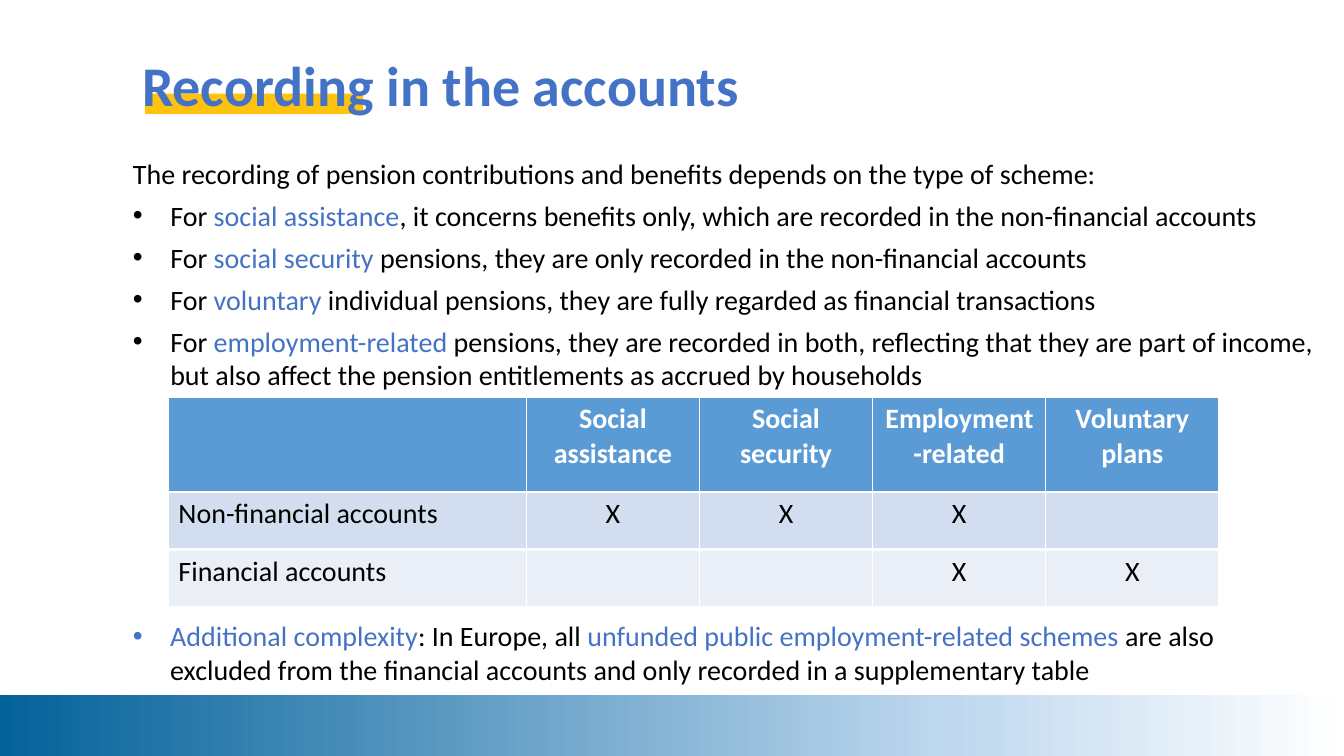
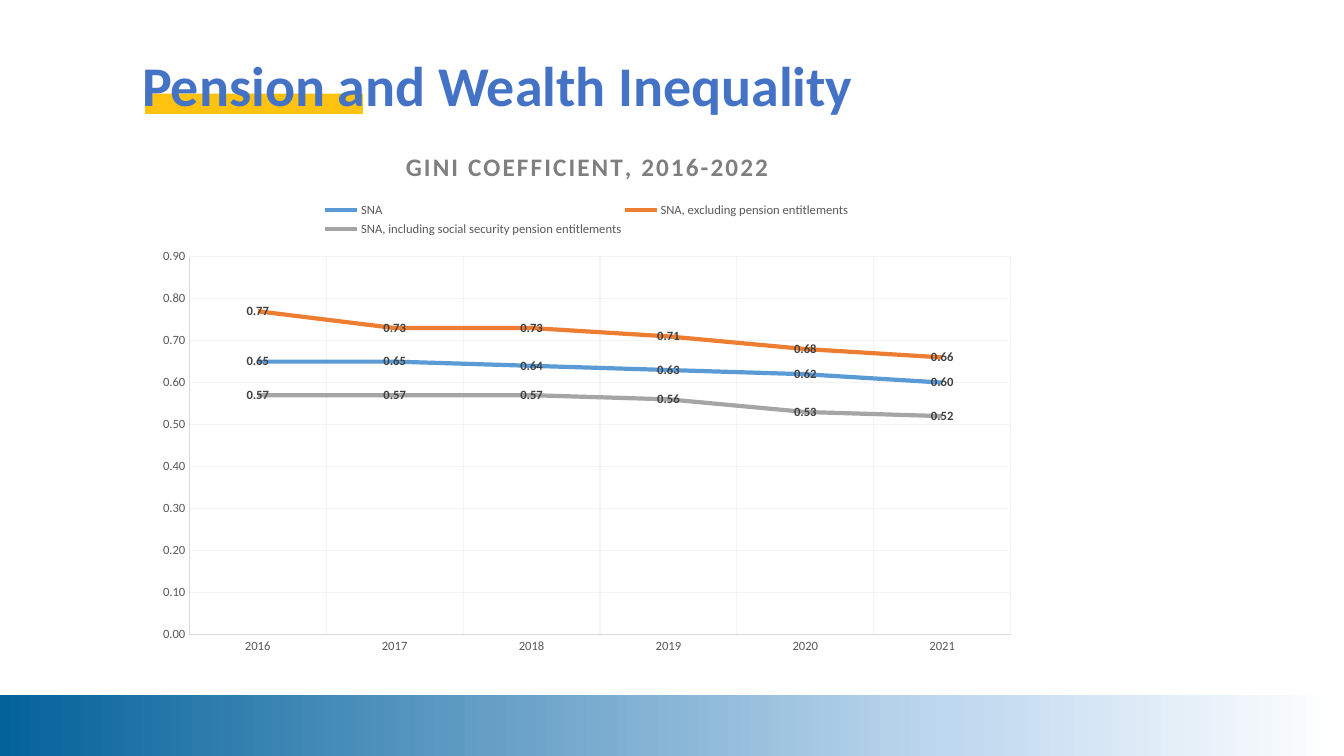
from pptx import Presentation
from pptx.chart.data import CategoryChartData
from pptx.dml.color import RGBColor
from pptx.enum.chart import (XL_CHART_TYPE, XL_LABEL_POSITION,
                             XL_LEGEND_POSITION, XL_TICK_MARK)
from pptx.enum.shapes import MSO_SHAPE
from pptx.enum.text import MSO_ANCHOR, MSO_AUTO_SIZE, PP_ALIGN
from pptx.oxml import parse_xml
from pptx.oxml.ns import nsdecls, qn
from pptx.util import Inches, Pt

FONT = "Calibri"
BLUE = RGBColor(0x44, 0x72, 0xC4)
SKY = RGBColor(0x5B, 0x9B, 0xD5)
GOLD = RGBColor(0xFF, 0xC2, 0x0E)
ORANGE = RGBColor(0xED, 0x7D, 0x31)
SILVER = RGBColor(0xA5, 0xA5, 0xA5)
BLACK = RGBColor(0, 0, 0)
WHITE = RGBColor(0xFF, 0xFF, 0xFF)
DARK = RGBColor(0x40, 0x40, 0x40)
GRAY = RGBColor(0x59, 0x59, 0x59)
MID = RGBColor(0x7F, 0x7F, 0x7F)
AXIS = RGBColor(0xD9, 0xD9, 0xD9)
GRID = RGBColor(0xF3, 0xF3, 0xF3)
BANDS = [RGBColor(0xD2, 0xDE, 0xEF), RGBColor(0xEA, 0xEF, 0xF7)]
FADE = [(0, RGBColor(0x04, 0x62, 0x9A)), (70, RGBColor(0xBD, 0xD7, 0xEE)),
        (100, WHITE)]

INTRO = "The recording of pension contributions and benefits depends on the type of scheme:"
POINTS = [
    "For |social assistance|, it concerns benefits only, which are recorded in the non-financial accounts",
    "For |social security| pensions, they are only recorded in the non-financial accounts",
    "For |voluntary| individual pensions, they are fully regarded as financial transactions",
    "For |employment-related| pensions, they are recorded in both, reflecting that they are part "
    "of income, but also affect the pension entitlements as accrued by households",
]
EXTRA = ("|Additional complexity|: In Europe, all |unfunded public employment-related schemes| "
         "are also excluded from the financial accounts and only recorded in a supplementary table")
ROWS = [
    ["", "Social assistance", "Social security", "Employment-related", "Voluntary plans"],
    ["Non-financial accounts", "X", "X", "X", ""],
    ["Financial accounts", "", "", "X", "X"],
]
YEARS = ["2016", "2017", "2018", "2019", "2020", "2021"]
GINI = [
    ("SNA", SKY, [0.65, 0.65, 0.64, 0.63, 0.62, 0.60]),
    ("SNA, excluding pension entitlements", ORANGE,
     [0.77, 0.73, 0.73, 0.71, 0.68, 0.66]),
    ("SNA, including social security pension entitlements", SILVER,
     [0.57, 0.57, 0.57, 0.56, 0.53, 0.52]),
]


def style(font, size, color, bold=False):
    font.name, font.size, font.bold = FONT, Pt(size), bold
    font.color.rgb = color


def write(para, text, size=20, color=BLACK, bold=False, align=PP_ALIGN.LEFT,
          gap=0, bullet=False):
    """Fill a paragraph; parts between | marks turn blue."""
    para.alignment = align
    para.space_before = para.space_after = Pt(gap)
    for i, part in enumerate(text.split("|")):
        if part:
            run = para.add_run()
            run.text = part
            style(run.font, size, BLUE if i % 2 else color, bold)
    if bullet:
        props = para._p.get_or_add_pPr()
        props.set("marL", str(Inches(0.37)))
        props.set("indent", str(-Inches(0.37)))
        props.append(parse_xml(f'<a:buFont {nsdecls("a")} typeface="Arial"/>'))
        props.append(parse_xml(f'<a:buChar {nsdecls("a")} char="•"/>'))


def bar(slide, box, color):
    shape = slide.shapes.add_shape(MSO_SHAPE.RECTANGLE, *map(Inches, box))
    shape.shadow.inherit = False
    shape.line.fill.background()
    shape.fill.solid()
    shape.fill.fore_color.rgb = color
    return shape


def fade(shape):
    """Swap the solid fill for the left-to-right gradient."""
    stops = "".join(f'<a:gs pos="{pos * 1000}"><a:srgbClr val="{color}"/></a:gs>'
                    for pos, color in FADE)
    props = shape._element.spPr
    props.replace(props.find(qn("a:solidFill")), parse_xml(
        f'<a:gradFill {nsdecls("a")} rotWithShape="1"><a:gsLst>{stops}</a:gsLst>'
        '<a:lin ang="0" scaled="0"/></a:gradFill>'))


def frame(deck, title):
    """Add a slide with the title, its gold mark and the foot band."""
    slide = deck.slides.add_slide(deck.slide_layouts[5])
    mark = bar(slide, (1.44, 0.93, 2.16, 0.2), GOLD)
    head = slide.shapes.title
    head.left, head.top, head.width, head.height = map(Inches, (1.31, 0.67, 12.02, 0.42))
    mark._element.addnext(head._element)
    text = head.text_frame
    text.auto_size = MSO_AUTO_SIZE.NONE
    text.vertical_anchor = MSO_ANCHOR.MIDDLE
    write(text.paragraphs[0], title, size=40, color=BLUE, bold=True)
    text.paragraphs[0].line_spacing = 0.9
    fade(bar(slide, (0, 6.9, 13.33, 0.6), WHITE))
    return slide


def notes(slide, box, lines):
    """Place a text box; lines holds (text, bullet) pairs."""
    text = slide.shapes.add_textbox(*map(Inches, box)).text_frame
    text.word_wrap = True
    for i, (line, bullet) in enumerate(lines):
        para = text.add_paragraph() if i else text.paragraphs[0]
        write(para, line, gap=3, bullet=bullet)


def edge(cell):
    """Give a cell white borders, the lower one thicker."""
    props = cell._tc.get_or_add_tcPr()
    for i, (side, width) in enumerate(zip("LRTB", (1, 1, 1, 2))):
        props.insert(i, parse_xml(
            f'<a:ln{side} {nsdecls("a")} w="{Pt(width)}"><a:solidFill>'
            f'<a:srgbClr val="{WHITE}"/></a:solidFill></a:ln{side}>'))


def matrix(slide, box):
    left, top, width, height = box
    first, head = 3.55, 0.94
    table = slide.shapes.add_table(len(ROWS), len(ROWS[0]), *map(Inches, box)).table
    for i, col in enumerate(table.columns):
        col.width = Inches((width - first) / (len(ROWS[0]) - 1) if i else first)
    for r, row in enumerate(ROWS):
        table.rows[r].height = Inches((height - head) / (len(ROWS) - 1) if r else head)
        for c, text in enumerate(row):
            cell = table.cell(r, c)
            cell.fill.solid()
            cell.fill.fore_color.rgb = BANDS[r - 1] if r else SKY
            edge(cell)
            write(cell.text_frame.paragraphs[0], text, bold=not r,
                  color=BLACK if r else WHITE,
                  align=PP_ALIGN.CENTER if c else PP_ALIGN.LEFT)


def place(part, index, **spots):
    """Set a chart part's layout, as fractions of the chart."""
    for old in part.findall(qn("c:layout")):
        part.remove(old)
    inner = '<c:layoutTarget val="inner"/>' if part.tag == qn("c:plotArea") else ""
    modes = "".join(f'<c:{k}Mode val="edge"/>' for k in "xy")
    sizes = "".join(f'<c:{k} val="{v}"/>' for k, v in spots.items())
    part.insert(index, parse_xml(
        f'<c:layout {nsdecls("c")}><c:manualLayout>{inner}{modes}{sizes}'
        '</c:manualLayout></c:layout>'))


def axes(chart):
    for axis in (chart.category_axis, chart.value_axis):
        axis.major_tick_mark = axis.minor_tick_mark = XL_TICK_MARK.NONE
        axis.has_major_gridlines = True
        for line, color, width in ((axis.format.line, AXIS, 0.25),
                                   (axis.major_gridlines.format.line, GRID, 0.75)):
            line.color.rgb, line.width = color, Pt(width)
        style(axis.tick_labels.font, 9, GRAY)
    value = chart.value_axis
    value.minimum_scale, value.maximum_scale, value.major_unit = 0, 0.9, 0.1
    value.tick_labels.number_format = "0.00"
    value.tick_labels.number_format_is_linked = False


def trend(series, color):
    series.smooth = False
    series.format.line.color.rgb = color
    series.format.line.width = Pt(3)
    labels = series.data_labels
    labels.show_value = True
    labels.position = XL_LABEL_POSITION.CENTER
    labels.number_format, labels.number_format_is_linked = "0.00", False
    style(labels.font, 9, DARK, bold=True)


def graph(slide, box):
    data = CategoryChartData()
    data.categories = YEARS
    for name, _, values in GINI:
        data.add_series(name, values)
    chart = slide.shapes.add_chart(XL_CHART_TYPE.LINE, *map(Inches, box), data).chart
    style(chart.font, 10, BLACK)
    para = chart.chart_title.text_frame.paragraphs[0]
    write(para, "GINI COEFFICIENT, 2016-2022", size=18, color=MID, bold=True,
          align=PP_ALIGN.CENTER)
    para.runs[0].font._element.set("spc", "150")
    chart.chart_title.include_in_layout = False
    chart.has_legend = True
    legend = chart.legend
    legend.position = XL_LEGEND_POSITION.TOP
    legend.include_in_layout = False
    style(legend.font, 9, GRAY)
    axes(chart)
    plot = chart.plots[0]
    plot.vary_by_categories = False
    for series, (_, color, _) in zip(plot.series, GINI):
        trend(series, color)
    place(chart.chart_title._element, 1, x=0.29, y=0.03)
    place(legend._element, 1, x=0.2, y=0.13, w=0.6, h=0.08)
    place(chart._chartSpace.chart.plotArea, 0, x=0.05, y=0.24, w=0.93, h=0.71)


def main():
    deck = Presentation()
    deck.slide_width, deck.slide_height = Inches(13.33), Inches(7.5)
    slide = frame(deck, "Recording in the accounts")
    matrix(slide, (1.67, 3.94, 10.42, 2.08))
    notes(slide, (1.22, 1.5, 11.95, 2.45),
          [(INTRO, False)] + [(point, True) for point in POINTS])
    notes(slide, (1.22, 6.09, 11.4, 0.8), [(EXTRA, True)])
    slide = frame(deck, "Pension and Wealth Inequality")
    graph(slide, (1.44, 1.28, 8.76, 5.28))
    deck.save("out.pptx")


if __name__ == "__main__":
    main()
